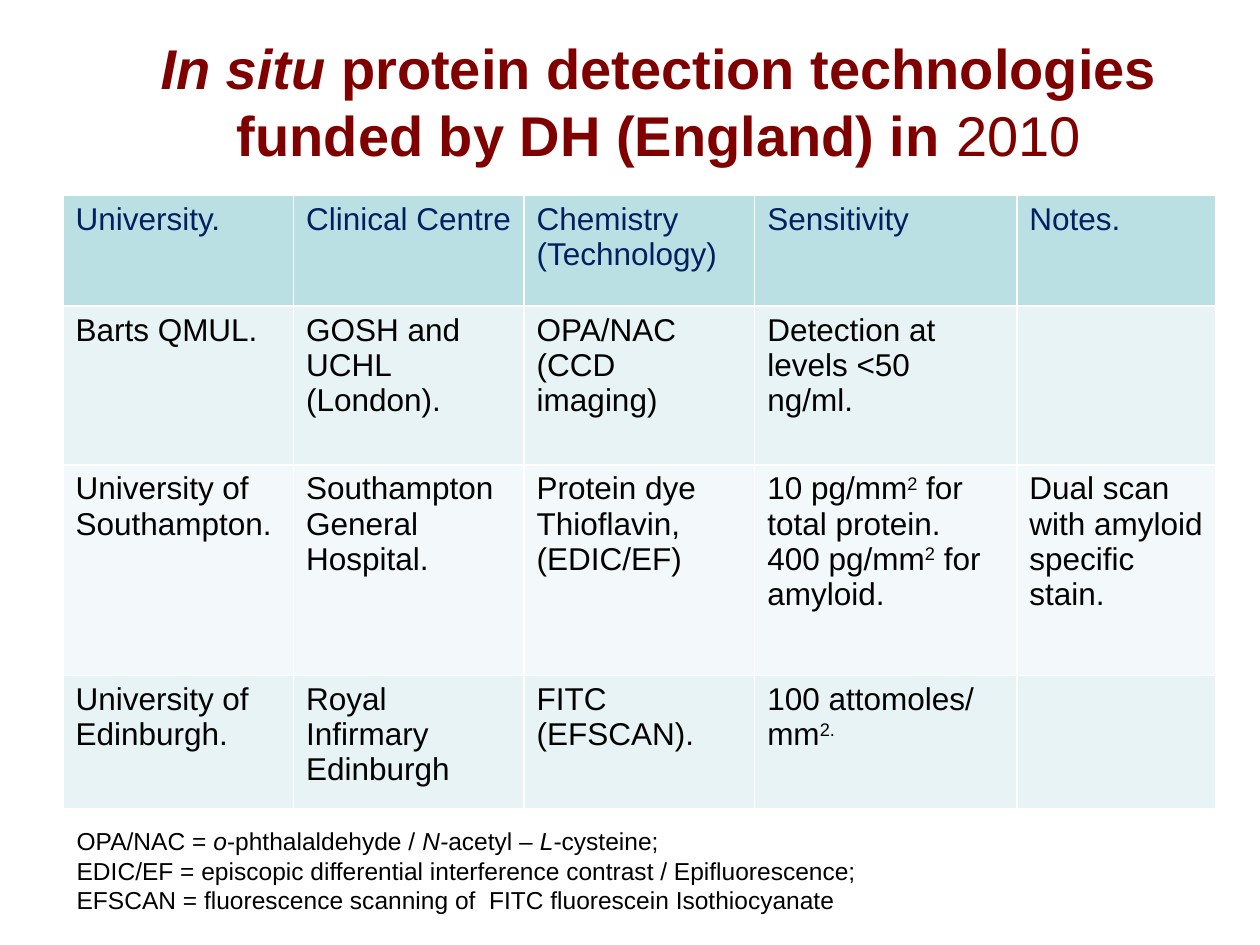
"""Build a slide with a table of in situ protein detection technologies."""
from pptx import Presentation
from pptx.dml.color import RGBColor
from pptx.enum.text import MSO_ANCHOR, PP_ALIGN
from pptx.util import Inches, Pt

COLORS = {"title": "800000", "heading": "002060", "text": "000000",
          "header": "BBE0E3", "odd": "E7F3F4", "even": "F3F9FA"}
TITLE = {"size": Pt(32), "bold": True}
CELL = {"size": Pt(18), "bold": False}
NOTE = {"size": Pt(14)}
ITALIC = {"italic": True}
SUPER = {"baseline": "30000"}


def write(tf, paras, fmt, color, align=PP_ALIGN.LEFT):
    tf.word_wrap = True
    for i, runs in enumerate(paras):
        p = tf.paragraphs[0] if i == 0 else tf.add_paragraph()
        p.alignment = align
        for run in [runs] if isinstance(runs, str) else runs:
            text, extra = (run, {}) if isinstance(run, str) else run
            r = p.add_run()
            r.text = text
            r.font.name = "Arial"
            r.font.color.rgb = RGBColor.from_string(COLORS[color])
            for key, value in {**fmt, **extra}.items():
                if key == "baseline":
                    r.font._element.set(key, value)
                else:
                    setattr(r.font, key, value)


prs = Presentation()
prs.slide_width, prs.slide_height = Inches(10), Inches(7.5)
s = prs.slides.add_slide(prs.slide_layouts[6])

title = s.shapes.add_textbox(Inches(1.05), Inches(0.21), Inches(8.36), Inches(1.18))
title.text_frame.vertical_anchor = MSO_ANCHOR.MIDDLE
write(title.text_frame,
      [[("In situ ", ITALIC), "protein detection technologies funded by DH (England) in",
        (" 2010", {"bold": False})]],
      TITLE, "title", PP_ALIGN.CENTER)

rows = [
    [["University."], ["Clinical Centre"], ["Chemistry", "(Technology)"],
     ["Sensitivity"], ["Notes."]],
    [["Barts QMUL."], ["GOSH and UCHL", "(London)."], ["OPA/NAC", "(CCD imaging)"],
     ["Detection at levels <50 ng/ml."], []],
    [["University of Southampton."], ["Southampton General Hospital."],
     ["Protein dye", "Thioflavin,", "(EDIC/EF)"],
     [["10 pg/mm", ("2", SUPER), " for total protein."],
      ["400 pg/mm", ("2", SUPER), " for amyloid."]],
     ["Dual scan with amyloid specific stain."]],
    [["University of Edinburgh."], ["Royal Infirmary  Edinburgh"], ["FITC", "(EFSCAN)."],
     [["100 attomoles/ mm", ("2.", SUPER)]], []],
]
widths = [1.83, 1.83, 1.83, 2.08, 1.58]
heights = [0.88, 1.26, 1.67, 1.06]
table = s.shapes.add_table(len(rows), len(widths), Inches(0.5), Inches(1.55),
                           Inches(sum(widths)), Inches(sum(heights))).table
for col, width in zip(table.columns, widths):
    col.width = Inches(width)
for i, (row, height) in enumerate(zip(rows, heights)):
    table.rows[i].height = Inches(height)
    fill = "header" if i == 0 else "odd" if i % 2 else "even"
    for j, paras in enumerate(row):
        cell = table.cell(i, j)
        cell.fill.solid()
        cell.fill.fore_color.rgb = RGBColor.from_string(COLORS[fill])
        write(cell.text_frame, paras, CELL, "text" if i else "heading")

notes = s.shapes.add_textbox(Inches(0.51), Inches(6.51), Inches(7.32), Inches(0.81))
write(notes.text_frame,
      [["OPA/NAC = ", ("o", ITALIC), "-phthalaldehyde / ", ("N-", ITALIC),
        "acetyl – ", ("L", ITALIC), "-cysteine;"],
       "EDIC/EF = episcopic differential interference contrast / Epifluorescence;",
       "EFSCAN = fluorescence scanning of  FITC fluorescein Isothiocyanate"],
      NOTE, "text")

prs.save("out.pptx")
